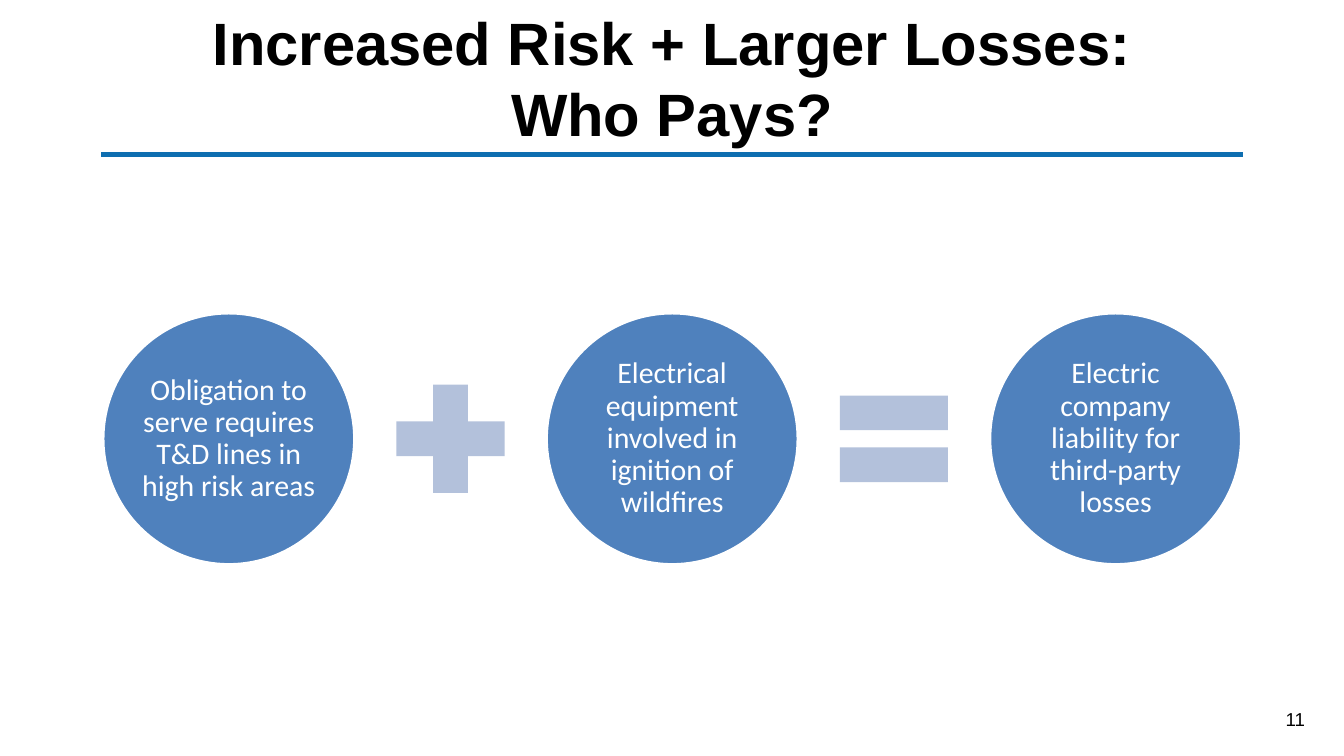
from collections import namedtuple

from pptx import Presentation
from pptx.dml.color import RGBColor
from pptx.enum.shapes import MSO_CONNECTOR, MSO_SHAPE
from pptx.enum.text import MSO_ANCHOR, PP_ALIGN
from pptx.oxml.xmlchemy import OxmlElement
from pptx.util import Cm, Pt

BLACK = RGBColor(0x00, 0x00, 0x00)
WHITE = RGBColor(0xFF, 0xFF, 0xFF)
RULE_BLUE = RGBColor(0x0E, 0x6E, 0xB0)
CIRCLE_BLUE = RGBColor(0x4F, 0x81, 0xBD)
SYMBOL_BLUE = RGBColor(0xB3, 0xC1, 0xDB)

STRAIGHT = MSO_CONNECTOR.STRAIGHT
OVAL = MSO_SHAPE.OVAL
PLUS = MSO_SHAPE.MATH_PLUS
EQUAL = MSO_SHAPE.MATH_EQUAL
MIDDLE = MSO_ANCHOR.MIDDLE
CENTER = PP_ALIGN.CENTER

Box = namedtuple("Box", "left top width height")

TITLE_LINES = ["Increased Risk + Larger Losses:", "Who Pays?"]
TERMS = [
    "Obligation to serve requires T&D lines in high risk areas",
    "Electrical equipment involved in ignition of wildfires",
    "Electric company liability for third-party losses",
]
OPERATORS = [PLUS, EQUAL]


def set_margins(frame, margin):
    frame.margin_left = frame.margin_right = margin
    frame.margin_top = frame.margin_bottom = margin


def add_text(frame, lines, font_name, size, color, bold=False):
    frame.word_wrap = True
    para = frame.paragraphs[0]
    para.alignment = CENTER
    for index, line in enumerate(lines):
        if index:
            para.add_line_break()
        span = para.add_run()
        span.text = line
        span.font.name = font_name
        span.font.size = Pt(size)
        span.font.bold = bold
        span.font.color.rgb = color
    return para


def add_title(page, box):
    bottom = box.top + box.height
    rule = page.shapes.add_connector(
        STRAIGHT, box.left, bottom, box.left + box.width, bottom
    )
    rule.line.color.rgb = RULE_BLUE
    rule.line.width = Pt(2.25)
    rule._element.spPr.append(OxmlElement("a:effectLst"))
    frame = page.shapes.add_textbox(*box).text_frame
    set_margins(frame, 0)
    frame.vertical_anchor = MIDDLE
    add_text(frame, TITLE_LINES, "Arial", 32, BLACK, bold=True)


def add_circle(page, box, text):
    circle = page.shapes.add_shape(OVAL, *box)
    circle.shadow.inherit = False
    circle.fill.solid()
    circle.fill.fore_color.rgb = CIRCLE_BLUE
    circle.line.color.rgb = WHITE
    circle.line.width = Pt(2)
    frame = circle.text_frame
    set_margins(frame, Cm(0.05))
    frame.vertical_anchor = MIDDLE
    para = add_text(frame, [text], "Calibri", 16, WHITE)
    para.line_spacing = 0.9


def add_operator(page, box, preset):
    operator = page.shapes.add_shape(preset, *box)
    operator.shadow.inherit = False
    operator.fill.solid()
    operator.fill.fore_color.rgb = SYMBOL_BLUE
    operator.line.fill.background()


def add_equation(page, box):
    circle_size = box.height
    operator_size = Cm(2.78)
    pitch = (box.width - circle_size) // (len(TERMS) - 1)
    operator_offset = (pitch + circle_size - operator_size) // 2
    operator_top = box.top + (circle_size - operator_size) // 2
    for index, term in enumerate(TERMS):
        left = box.left + index * pitch
        add_circle(page, Box(left, box.top, circle_size, circle_size), term)
    for index, preset in enumerate(OPERATORS):
        left = box.left + index * pitch + operator_offset
        add_operator(
            page, Box(left, operator_top, operator_size, operator_size), preset
        )


def add_page_number(page, box):
    frame = page.shapes.add_textbox(*box).text_frame
    add_text(frame, ["11"], "Arial", 10, BLACK)


def main():
    deck = Presentation()
    deck.slide_width = Cm(25.4)
    deck.slide_height = Cm(14.29)
    page = deck.slides.add_slide(deck.slide_layouts[6])
    add_title(page, Box(Cm(1.91), Cm(0), Cm(21.59), Cm(2.92)))
    add_equation(page, Box(Cm(1.94), Cm(5.91), Cm(21.53), Cm(4.77)))
    add_page_number(page, Box(Cm(23.83), Cm(13.26), Cm(1.3), Cm(0.69)))
    deck.save("out.pptx")


if __name__ == "__main__":
    main()
